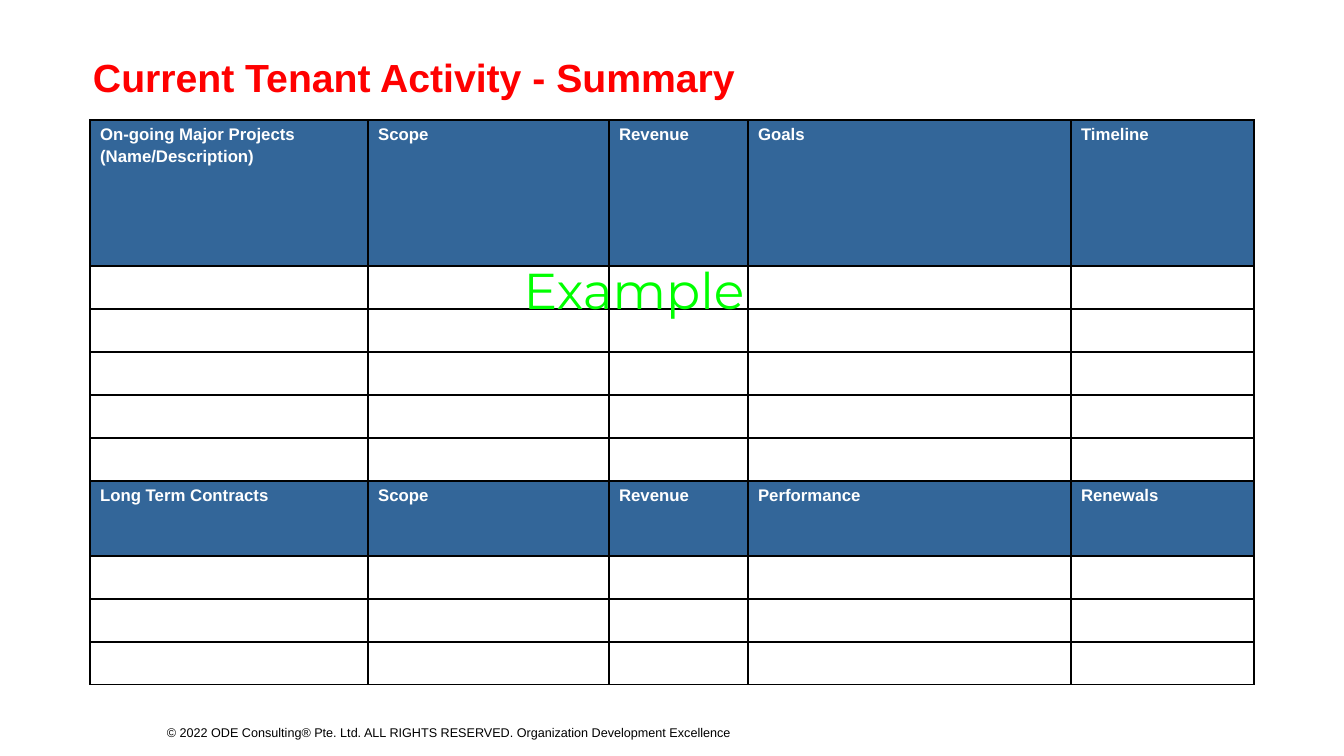
from lxml.etree import SubElement
from pptx import Presentation
from pptx.dml.color import RGBColor
from pptx.enum.text import MSO_ANCHOR, PP_ALIGN
from pptx.oxml.ns import qn
from pptx.util import Emu, Pt

THEME = {
    "title": {"name": "Arial", "size": Pt(28), "bold": True, "color": "FF0000"},
    "head": {"name": "Arial", "size": Pt(12), "bold": True, "color": "FFFFFF"},
    "stamp": {"name": "Montserrat", "size": Pt(36), "bold": False, "color": "00FF00"},
    "foot": {"name": "Arial", "size": Pt(9), "bold": False, "color": "000000"},
    "band": "336699",
    "rule": "000000",
}


def px(count):
    return Emu(round(count * 914400 / 100.8))


def write(frame, text, style):
    """Fill the frame with one paragraph per line of text, in a theme style."""
    frame.text = text
    for para in frame.paragraphs:
        for key, value in THEME[style].items():
            if key == "color":
                para.font.color.rgb = RGBColor.from_string(value)
            else:
                setattr(para.font, key, value)


deck = Presentation()
deck.slide_width, deck.slide_height = px(1344), px(756)
slide = deck.slides.add_slide(deck.slide_layouts[6])

# Footer and title
foot = slide.shapes.add_textbox(px(157), px(720), px(743), px(25)).text_frame
foot.word_wrap = True
foot.vertical_anchor = MSO_ANCHOR.MIDDLE
write(foot, "© 2022 ODE Consulting® Pte. Ltd. ALL RIGHTS RESERVED. "
      "Organization Development Excellence", "foot")

title = slide.shapes.add_textbox(px(93), px(40), px(1159), px(80)).text_frame
title.word_wrap = True
title.vertical_anchor = MSO_ANCHOR.MIDDLE
for side in ("left", "right", "top", "bottom"):
    setattr(title, f"margin_{side}", 0)
write(title, "Current Tenant Activity - Summary", "title")
title.paragraphs[0].line_spacing = 0.9

# Projects and contracts table
widths = [278, 241, 139, 323, 183]
heights = [146] + [43] * 5 + [75] + [43] * 3
heads = {
    0: ["On-going Major Projects\n(Name/Description)", "Scope", "Revenue",
        "Goals", "Timeline"],
    6: ["Long Term Contracts", "Scope", "Revenue", "Performance", "Renewals"],
}
last = len(heights) - 1
table = slide.shapes.add_table(len(heights), len(widths), px(90), px(120),
                               px(sum(widths)), px(sum(heights))).table
table.first_row = table.horz_banding = False
for column, width in zip(table.columns, widths):
    column.width = px(width)

for r, height in enumerate(heights):
    table.rows[r].height = px(height)
    for c in range(len(widths)):
        cell = table.cell(r, c)
        if r in heads:
            write(cell.text_frame, heads[r][c], "head")
            for para in cell.text_frame.paragraphs[1:]:
                para.space_before = Pt(2.4)
            cell.fill.solid()
            cell.fill.fore_color.rgb = RGBColor.from_string(THEME["band"])
        else:
            cell.fill.background()
        props = cell._tc.get_or_add_tcPr()
        rules = {"L": 1, "R": 1, "T": 1 if r == 0 else 2, "B": 1 if r == last else 2}
        for spot, (side, weight) in enumerate(rules.items()):
            line = SubElement(props, qn(f"a:ln{side}"), w=str(Pt(weight)))
            paint = SubElement(line, qn("a:solidFill"))
            SubElement(paint, qn("a:srgbClr"), val=THEME["rule"])
            props.insert(spot, line)

# Stamp over the table
stamp = slide.shapes.add_textbox(px(515), px(254), px(238), px(160)).text_frame
stamp.word_wrap = False
stamp.margin_left = stamp.margin_right = 0
write(stamp, "Example", "stamp")
stamp.paragraphs[0].alignment = PP_ALIGN.CENTER

deck.save("out.pptx")
